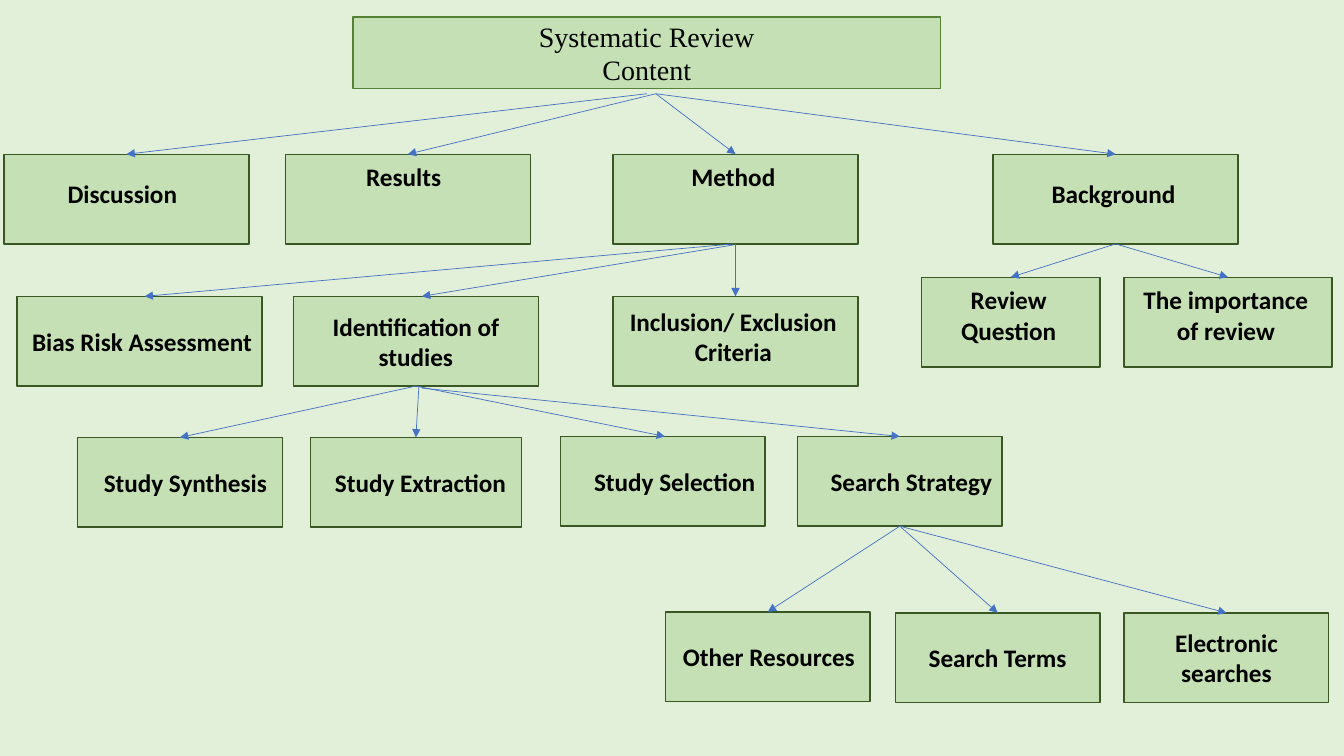
from lxml import etree
from pptx import Presentation
from pptx.dml.color import RGBColor
from pptx.enum.shapes import MSO_CONNECTOR, MSO_SHAPE
from pptx.enum.text import MSO_ANCHOR, PP_ALIGN
from pptx.oxml.ns import qn
from pptx.util import Inches, Pt

RECTANGLE = MSO_SHAPE.RECTANGLE
STRAIGHT = MSO_CONNECTOR.STRAIGHT
MIDDLE = MSO_ANCHOR.MIDDLE
CENTER, RIGHT = PP_ALIGN.CENTER, PP_ALIGN.RIGHT

COLORS = {
    "background": "E2F0D9",
    "box": "C5E0B4",
    "box_border": "385723",
    "title_border": "548235",
    "arrow": "4472C4",
    "text": "000000",
}

TITLE = "Systematic Review\nContent"
TITLE_BOX = (3.5, 0.17, 5.83, 0.71)
BOX_HEIGHT = 0.89
INSET = 0.1

# label, left, top, width, alignment, extra right inset, upward text shift
TOPICS = [
    ("Discussion", 0.04, 1.53, 2.43, CENTER, 0.08, 0.06),
    ("Results", 2.83, 1.53, 2.43, CENTER, 0.08, 0.22),
    ("Method", 6.08, 1.53, 2.43, CENTER, 0.04, 0.22),
    ("Background", 9.85, 1.53, 2.43, CENTER, 0.04, 0.06),
    ("Bias Risk Assessment", 0.17, 2.94, 2.43, RIGHT, 0, 0),
    ("Identification of studies", 2.91, 2.94, 2.43, CENTER, 0, 0),
    ("Inclusion/ Exclusion Criteria", 6.08, 2.94, 2.43, CENTER, 0.04, 0.05),
    ("Review Question", 9.14, 2.75, 1.77, CENTER, 0.04, 0.07),
    ("The importance of review", 11.15, 2.75, 2.06, CENTER, 0.04, 0.07),
    ("Study Synthesis", 0.77, 4.34, 2.03, RIGHT, 0.05, 0),
    ("Study Extraction", 3.08, 4.34, 2.09, RIGHT, 0.05, 0),
    ("Study Selection", 5.56, 4.33, 2.03, RIGHT, 0, 0),
    ("Search Strategy", 7.91, 4.33, 2.03, RIGHT, 0, 0),
    ("Other Resources", 6.6, 6.07, 2.03, RIGHT, 0.05, 0),
    ("Search Terms", 8.88, 6.08, 2.03, CENTER, 0, 0),
    ("Electronic searches", 11.15, 6.08, 2.03, CENTER, 0, 0),
]

# parent, child, start shift (x, y) from the parent's bottom, end shift in x
BRANCHES = [
    (TITLE, "Discussion", (0, 0.05), 0),
    (TITLE, "Results", (0.09, 0.05), 0),
    (TITLE, "Method", (0.09, 0.05), 0),
    (TITLE, "Background", (0.09, 0.05), 0),
    ("Method", "Bias Risk Assessment", (-0.02, 0), 0.05),
    ("Method", "Identification of studies", (-0.02, 0.01), 0.06),
    ("Method", "Inclusion/ Exclusion Criteria", (0, 0), 0),
    ("Background", "Review Question", (0, 0), 0),
    ("Background", "The importance of review", (0, 0), 0),
    ("Identification of studies", "Study Synthesis", (0, 0), 0),
    ("Identification of studies", "Study Extraction", (0.03, 0), 0),
    ("Identification of studies", "Study Selection", (0, 0), 0.02),
    ("Identification of studies", "Search Strategy", (0.06, 0.02), 0),
    ("Search Strategy", "Other Resources", (0, 0), 0),
    ("Search Strategy", "Search Terms", (0, 0), 0),
    ("Search Strategy", "Electronic searches", (0, 0), 0),
]


def color(name):
    return RGBColor.from_string(COLORS[name])


def add_box(page, box, label, border, font, size, bold=False,
            align=CENTER, gap=0, lift=0):
    """Draw a labelled rectangle; gap and lift shift its text left and up."""
    shape = page.shapes.add_shape(RECTANGLE, *map(Inches, box))
    shape.shadow.inherit = False
    shape.fill.solid()
    shape.fill.fore_color.rgb = color("box")
    shape.line.color.rgb = color(border)
    shape.line.width = Pt(1)
    frame = shape.text_frame
    frame.word_wrap = True
    frame.vertical_anchor = MIDDLE
    frame.margin_left = Inches(INSET)
    frame.margin_right = Inches(INSET + gap)
    frame.margin_top = Inches(0.05)
    frame.margin_bottom = Inches(0.05 + 2 * lift)
    frame.text = label
    for para in frame.paragraphs:
        para.alignment = align
        for run in para.runs:
            run.font.name = font
            run.font.size = Pt(size)
            run.font.bold = bold
            run.font.color.rgb = color("text")


def add_arrow(page, parent, child, start_shift, end_shift):
    """Join the parent's bottom centre to the child's top centre."""
    left, top, width, height = parent
    start = (left + width / 2 + start_shift[0], top + height + start_shift[1])
    end = (child[0] + child[2] / 2 + end_shift, child[1])
    arrow = page.shapes.add_connector(STRAIGHT, *map(Inches, start + end))
    arrow.line.color.rgb = color("arrow")
    arrow.line.width = Pt(0.5)
    etree.SubElement(arrow.line._get_or_add_ln(), qn("a:tailEnd"), type="triangle")
    etree.SubElement(arrow._element.spPr, qn("a:effectLst"))


def add_review_tree(page):
    boxes = {TITLE: TITLE_BOX}
    add_box(page, TITLE_BOX, TITLE, "title_border", "Times New Roman", 20)
    for label, left, top, width, align, gap, lift in TOPICS:
        boxes[label] = (left, top, width, BOX_HEIGHT)
        add_box(page, boxes[label], label, "box_border", "Calibri", 18,
                True, align, gap, lift)
    for parent, child, start_shift, end_shift in BRANCHES:
        add_arrow(page, boxes[parent], boxes[child], start_shift, end_shift)


def main():
    deck = Presentation()
    deck.slide_width, deck.slide_height = Inches(13.33), Inches(7.5)
    page = deck.slides.add_slide(deck.slide_layouts[6])
    page.background.fill.solid()
    page.background.fill.fore_color.rgb = color("background")
    add_review_tree(page)
    deck.save("out.pptx")


if __name__ == "__main__":
    main()
